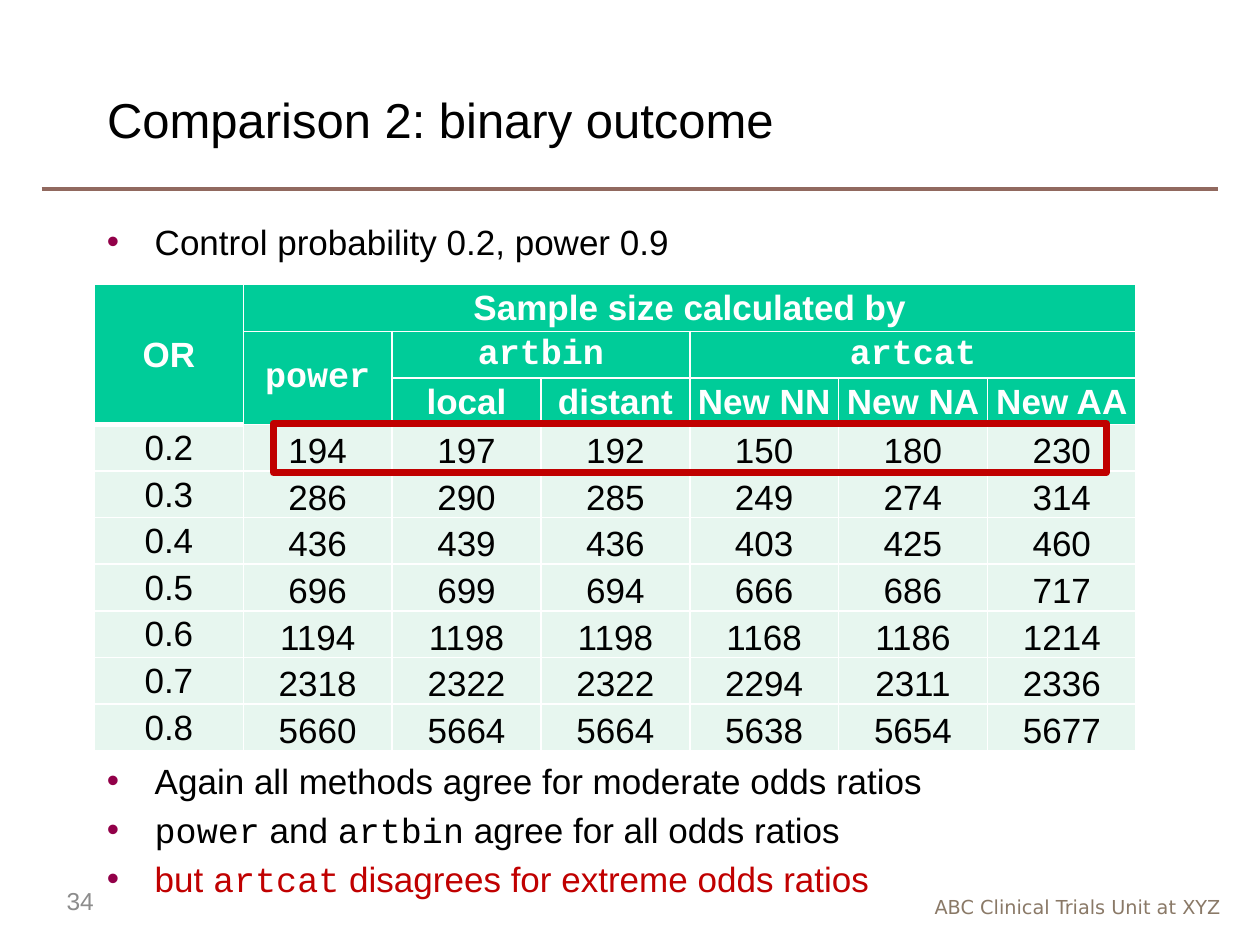
from lxml.etree import SubElement
from pptx import Presentation
from pptx.dml.color import RGBColor
from pptx.enum.shapes import MSO_CONNECTOR, MSO_SHAPE
from pptx.enum.text import MSO_ANCHOR, PP_ALIGN
from pptx.oxml.ns import qn
from pptx.util import Inches, Pt

SANS, MONO = "Arial", "Courier New"
BLACK, WHITE, RED = "000000", "FFFFFF", "C00000"
HEADER, BODY = "00CC99", "E7F6EF"
TABLE_BOX = (0.75, 2.26, 8.27, 3.7)
HEADINGS = [
    (0, 0, 2, 0, "OR", SANS),
    (0, 1, 0, 6, "Sample size calculated by", SANS),
    (1, 1, 2, 1, "power", MONO),
    (1, 2, 1, 3, "artbin", MONO),
    (1, 4, 1, 6, "artcat", MONO),
    (2, 2, 2, 2, "local", SANS),
    (2, 3, 2, 3, "distant", SANS),
    (2, 4, 2, 4, "New NN", SANS),
    (2, 5, 2, 5, "New NA", SANS),
    (2, 6, 2, 6, "New AA", SANS),
]
SAMPLE_SIZES = [
    ("0.2", 194, 197, 192, 150, 180, 230),
    ("0.3", 286, 290, 285, 249, 274, 314),
    ("0.4", 436, 439, 436, 403, 425, 460),
    ("0.5", 696, 699, 694, 666, 686, 717),
    ("0.6", 1194, 1198, 1198, 1168, 1186, 1214),
    ("0.7", 2318, 2322, 2322, 2294, 2311, 2336),
    ("0.8", 5660, 5664, 5664, 5638, 5654, 5677),
]
SETUP = [[("Control probability 0.2, power 0.9", SANS, BLACK)]]
FINDINGS = [
    [("Again all methods agree for moderate odds ratios", SANS, BLACK)],
    [("power", MONO, BLACK), (" and ", SANS, BLACK), ("artbin", MONO, BLACK),
     (" agree for all odds ratios", SANS, BLACK)],
    [("but ", SANS, RED), ("artcat", MONO, RED),
     (" disagrees for extreme odds ratios", SANS, RED)],
]


def rgb(value):
    """Turn a hex string into a colour."""
    return RGBColor.from_string(value)


def add_run(p, text, size, color, font=SANS, bold=False):
    """Add one formatted run to a paragraph."""
    r = p.add_run()
    r.text = text
    r.font.size, r.font.name, r.font.bold = Pt(size), font, bold
    r.font.color.rgb = rgb(color)


def add_text_box(slide, box, anchor=MSO_ANCHOR.TOP):
    """Add a wrapping text box and return its text frame."""
    tf = slide.shapes.add_textbox(*map(Inches, box)).text_frame
    tf.word_wrap = True
    tf.vertical_anchor = anchor
    return tf


def add_title(slide, box):
    """Place the title placeholder and the rule below it."""
    sp = slide.shapes.title
    sp.left, sp.top, sp.width, sp.height = map(Inches, box)
    tf = sp.text_frame
    tf.vertical_anchor = MSO_ANCHOR.MIDDLE
    tf.paragraphs[0].alignment = PP_ALIGN.LEFT
    add_run(tf.paragraphs[0], "Comparison 2: binary outcome", 28, BLACK)
    rule = slide.shapes.add_connector(
        MSO_CONNECTOR.STRAIGHT, Inches(0.33), Inches(1.5), Inches(9.67), Inches(1.5))
    rule.line.color.rgb = rgb("91695F")
    rule.line.width = Pt(1.75)
    SubElement(rule._element.spPr, qn("a:effectLst"))


def add_bullets(slide, box, items):
    """Write a bulleted list with a hanging indent."""
    tf = add_text_box(slide, box)
    for i, runs in enumerate(items):
        p = tf.add_paragraph() if i else tf.paragraphs[0]
        p.space_before = Pt(4)
        pPr = p._p.get_or_add_pPr()
        pPr.set("marL", str(Inches(0.38)))
        pPr.set("indent", str(-Inches(0.38)))
        SubElement(SubElement(pPr, qn("a:buClr")), qn("a:srgbClr"), val="920049")
        SubElement(pPr, qn("a:buFont"), typeface=SANS)
        SubElement(pPr, qn("a:buChar"), char="•")
        for text, font, color in runs:
            add_run(p, text, 20, color, font)


def style_cell(cell, fill, bottom=1):
    """Give a cell its borders, fill and margins."""
    tcPr = cell._tc.get_or_add_tcPr()
    for side, width in (("L", 1), ("R", 1), ("T", 1), ("B", bottom)):
        ln = SubElement(tcPr, qn(f"a:ln{side}"), w=str(Pt(width)))
        SubElement(SubElement(ln, qn("a:solidFill")), qn("a:srgbClr"), val=WHITE)
    cell.fill.solid()
    cell.fill.fore_color.rgb = rgb(fill)
    cell.margin_left = cell.margin_right = cell.margin_top = Inches(0.01)
    cell.margin_bottom = 0


def fill_cell(cell, text, color, anchor, font=SANS, bold=False):
    """Write centred text in a cell."""
    cell.vertical_anchor = anchor
    p = cell.text_frame.paragraphs[0]
    p.alignment = PP_ALIGN.CENTER
    add_run(p, text, 20, color, font, bold)


def add_sample_table(slide, box):
    """Build the sample size table with its merged headings."""
    x, y, w, h = map(Inches, box)
    n_head, n_cols = 3, len(SAMPLE_SIZES[0])
    n_rows = n_head + len(SAMPLE_SIZES)
    table = slide.shapes.add_table(n_rows, n_cols, x, y, w, h).table
    for col in table.columns:
        col.width = w // n_cols
    for i, row in enumerate(table.rows):
        row.height = h // n_rows
        for j, cell in enumerate(row.cells):
            style_cell(cell, HEADER if i < n_head else BODY, 3 if i < n_head and j == 0 else 1)
    for top, left, bottom, right, text, font in HEADINGS:
        cell = table.cell(top, left)
        if (top, left) != (bottom, right):
            cell.merge(table.cell(bottom, right))
        fill_cell(cell, text, WHITE, MSO_ANCHOR.MIDDLE, font, True)
    for i, values in enumerate(SAMPLE_SIZES, n_head):
        for j, value in enumerate(values):
            anchor = MSO_ANCHOR.BOTTOM if j else MSO_ANCHOR.MIDDLE
            fill_cell(table.cell(i, j), str(value), BLACK, anchor)


def add_highlight(slide, box):
    """Outline the row with the extreme odds ratio."""
    sp = slide.shapes.add_shape(MSO_SHAPE.RECTANGLE, *map(Inches, box))
    sp.shadow.inherit = False
    sp.fill.background()
    sp.line.color.rgb = rgb(RED)
    sp.line.width = Pt(4)


def add_footer(slide, number_box, unit_box):
    """Write the slide number and the name of the unit."""
    tf = add_text_box(slide, number_box, MSO_ANCHOR.MIDDLE)
    add_run(tf.paragraphs[0], "34", 14, "8C8C8C")
    p = add_text_box(slide, unit_box).paragraphs[0]
    p.alignment = PP_ALIGN.RIGHT
    add_run(p, "ABC Clinical Trials Unit at XYZ", 11, "8A7967", "DejaVu Sans")


def main():
    """Build and save the slide."""
    prs = Presentation()
    prs.slide_width, prs.slide_height = Inches(10), Inches(7.5)
    slide = prs.slides.add_slide(prs.slide_layouts[5])
    add_title(slide, (0.75, 0.5, 8.56, 0.89))
    add_bullets(slide, (0.75, 1.7, 8.5, 0.45), SETUP)
    add_sample_table(slide, TABLE_BOX)
    add_bullets(slide, (0.75, 5.98, 8.5, 1.25), FINDINGS)
    add_footer(slide, (0.43, 6.95, 2.25, 0.4), (6.46, 7.06, 3.33, 0.29))
    add_highlight(slide, (2.17, 3.36, 6.61, 0.39))
    prs.save("out.pptx")


if __name__ == "__main__":
    main()
